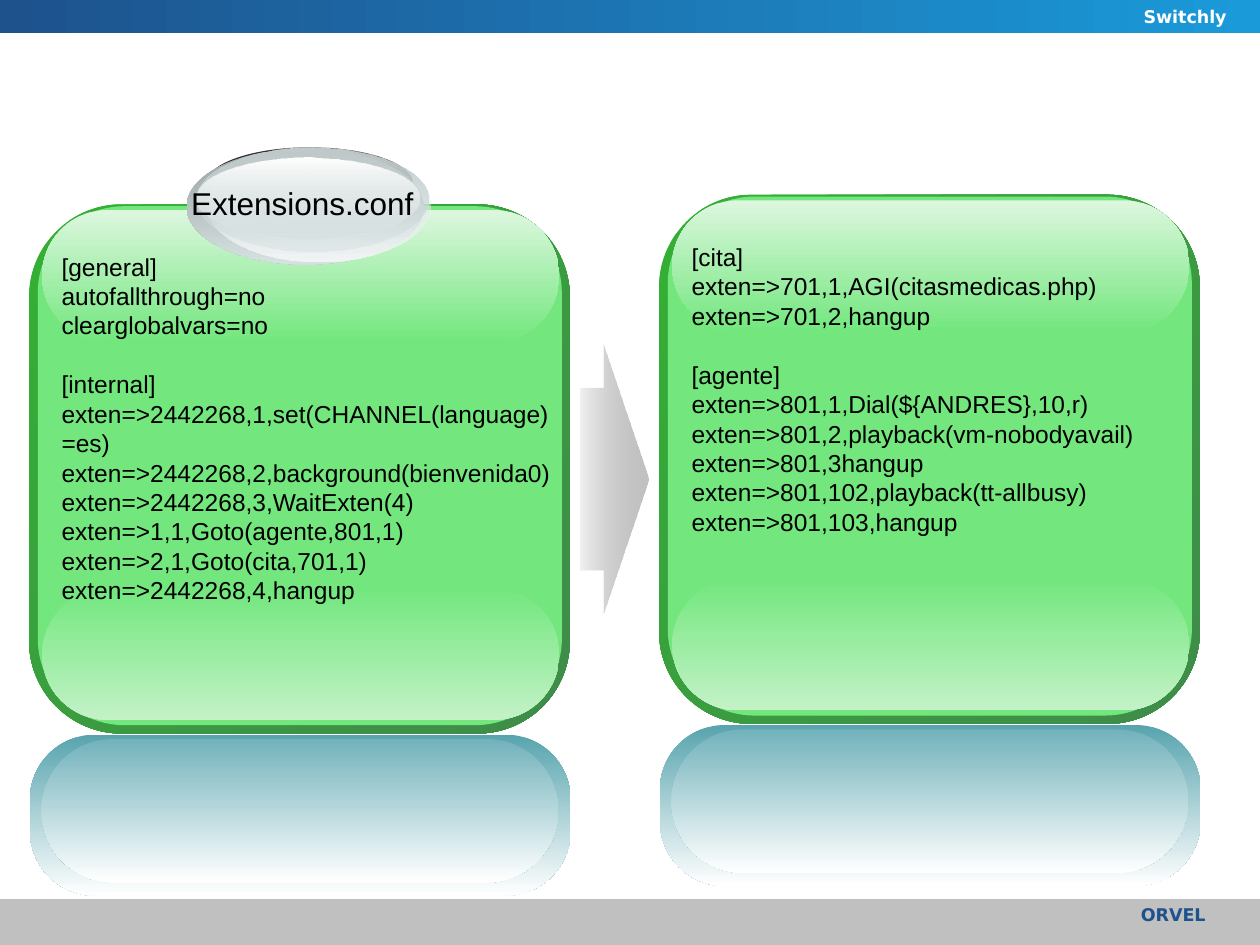
from lxml.etree import SubElement
from pptx import Presentation
from pptx.dml.color import RGBColor as RGB
from pptx.enum.shapes import MSO_SHAPE as SHAPE
from pptx.enum.text import MSO_AUTO_SIZE as FIT, PP_ALIGN as ALIGN
from pptx.oxml.ns import qn
from pptx.util import Pt

WHITE = RGB(0xFF, 0xFF, 0xFF)
BLACK = RGB(0, 0, 0)
CHARCOAL = RGB(0x33, 0x33, 0x33)
SILVER = RGB(0xC0, 0xC0, 0xC0)
GREY = RGB(0x89, 0x89, 0x89)
NAVY = RGB(0x1D, 0x52, 0x8D)
SKY = RGB(0x1B, 0x9A, 0xD9)
GREEN = RGB(0x73, 0xE7, 0x7E)
RIM_LIGHT = RGB(0x34, 0xB0, 0x34)
RIM_DARK = RGB(0x3F, 0x8B, 0x4A)
GLOW_LOW = RGB(0xC3, 0xF2, 0xC7)
GLOW_TOP = RGB(0xDD, 0xF7, 0xDF)
TEAL = RGB(0x58, 0xA4, 0xAE)
TEAL_LIGHT = RGB(0x72, 0xB2, 0xBB)
STEEL = RGB(0x99, 0xA1, 0xA2)
STEEL_MID = RGB(0xC1, 0xCB, 0xCC)
MIST = RGB(0xD6, 0xE1, 0xE2)
FROST = RGB(0xF2, 0xF5, 0xF5)


def add_block(parent, kind, box, colours, angle=0, adjust=(), alphas=(100, 100)):
    """Borderless shape: one colour is a solid fill, two are a gradient."""
    block = parent.add_shape(kind, *map(Pt, box))
    block.shadow.inherit = False
    block.line.fill.background()
    for i, value in enumerate(adjust):
        block.adjustments[i] = value
    if len(colours) == 1:
        block.fill.solid()
        block.fill.fore_color.rgb = colours[0]
        return
    block.fill.gradient()
    block.fill.gradient_angle = -angle % 360
    for stop, colour, alpha in zip(block.fill.gradient_stops, colours, alphas):
        stop.color.rgb = colour
    for colour_xml, alpha in zip(block._element.spPr.iter(qn("a:srgbClr")), alphas):
        if alpha < 100:
            SubElement(colour_xml, qn("a:alpha")).set("val", str(alpha * 1000))


def add_text(parent, box, lines, font, align=ALIGN.LEFT, wrap=True, pitch=None):
    """Text box; an empty line becomes space before the next paragraph."""
    frame = parent.add_textbox(*map(Pt, box)).text_frame
    frame.word_wrap = wrap
    frame.auto_size = FIT.NONE
    paragraph, gap = frame.paragraphs[0], False
    for i, line in enumerate(lines):
        if not line:
            gap = True
            continue
        if i:
            paragraph = frame.add_paragraph()
        paragraph.alignment = align
        if pitch:
            paragraph.line_spacing = Pt(pitch)
        if gap:
            paragraph.space_before = Pt(pitch)
            gap = False
        run = paragraph.add_run()
        run.text = line
        run.font.color.rgb = font["colour"]
        for name in ("name", "size", "bold"):
            setattr(run.font, name, font[name])


prs = Presentation()
prs.slide_width, prs.slide_height = Pt(720), Pt(540)
slide = prs.slides.add_slide(prs.slide_layouts[6])
shapes = slide.shapes

# Footer and header bands
add_block(shapes, SHAPE.RECTANGLE, (0, 513.8, 720, 26.2), [SILVER])
add_block(shapes, SHAPE.RECTANGLE, (0, 0, 720, 18.8), [NAVY, SKY])
band_font = {"name": "DejaVu Sans", "size": Pt(10), "bold": True}
add_text(shapes, (540, 0, 168, 18), ["Switchly"],
         band_font | {"colour": WHITE}, ALIGN.RIGHT)
add_text(shapes, (468, 512.8, 228, 23), ["ORVEL"],
         band_font | {"colour": NAVY}, ALIGN.RIGHT)

# Glossy panels with their reflections, placed from each panel's corner
body_font = {"name": "Arial", "size": Pt(14), "bold": False, "colour": BLACK}
panel_layers = [
    ((0, 0, 309, 302.4), [RIM_LIGHT, RIM_DARK], 45, 0.175),
    ((5, 1, 299.5, 296.6), [GREEN], 0, 0.167),
    ((7.5, 219.6, 295.5, 75), [GREEN, GLOW_LOW], 90, 0.5),
    ((7.5, 3.2, 295.5, 75), [GLOW_TOP, GREEN], 90, 0.5),
    ((0.5, 303, 309, 92), [TEAL, WHITE], 90, 0.404),
    ((7, 305.5, 295.5, 82), [TEAL_LIGHT, WHITE], 90, 0.5),
]
panels = [
    (16.6, 116.8, [
        "[general]",
        "autofallthrough=no",
        "clearglobalvars=no",
        "",
        "[internal]",
        "exten=>2442268,1,set(CHANNEL(language)=es)",
        "exten=>2442268,2,background(bienvenida0)",
        "exten=>2442268,3,WaitExten(4)",
        "exten=>1,1,Goto(agente,801,1)",
        "exten=>2,1,Goto(cita,701,1)",
        "exten=>2442268,4,hangup",
    ]),
    (376.6, 111.3, [
        "[cita]",
        "exten=>701,1,AGI(citasmedicas.php)",
        "exten=>701,2,hangup",
        "",
        "[agente]",
        "exten=>801,1,Dial(${ANDRES},10,r)",
        "exten=>801,2,playback(vm-nobodyavail)",
        "exten=>801,3hangup",
        "exten=>801,102,playback(tt-allbusy)",
        "exten=>801,103,hangup",
    ]),
]
for left, top, dialplan in panels:
    panel = shapes.add_group_shape().shapes
    for (x, y, width, height), colours, angle, corner in panel_layers:
        add_block(panel, SHAPE.ROUNDED_RECTANGLE, (left + x, top + y, width, height),
                  colours, angle, [corner])
    add_text(panel, (left + 11.5, top + 23.5, 294, 210), dialplan, body_font, pitch=16.8)

# File name badge
badge = shapes.add_group_shape().shapes
badge_layers = [
    ((118, 84.2, 118, 41), [CHARCOAL], (100, 100)),
    ((106.6, 85, 135.4, 66.2), [STEEL, MIST], (100, 100)),
    ((118, 84.2, 128.2, 65.5), [MIST, FROST], (0, 100)),
    ((112.3, 84.2, 132.5, 59.8), [STEEL_MID, MIST], (100, 48)),
    ((112.3, 90, 127.4, 46), [WHITE, MIST], (100, 38)),
]
for box, colours, alphas in badge_layers:
    add_block(badge, SHAPE.OVAL, box, colours, 90, alphas=alphas)
add_text(badge, (101.5, 101.5, 142.6, 28.8), ["Extensions.conf"],
         body_font | {"size": Pt(18)}, ALIGN.CENTER, wrap=False)

# Arrow between the panels
add_block(shapes, SHAPE.RIGHT_ARROW, (331.9, 196.6, 38.9, 154), [GREY, SILVER],
          adjust=[0.677, 0.662], alphas=(12, 100))

prs.save("out.pptx")
